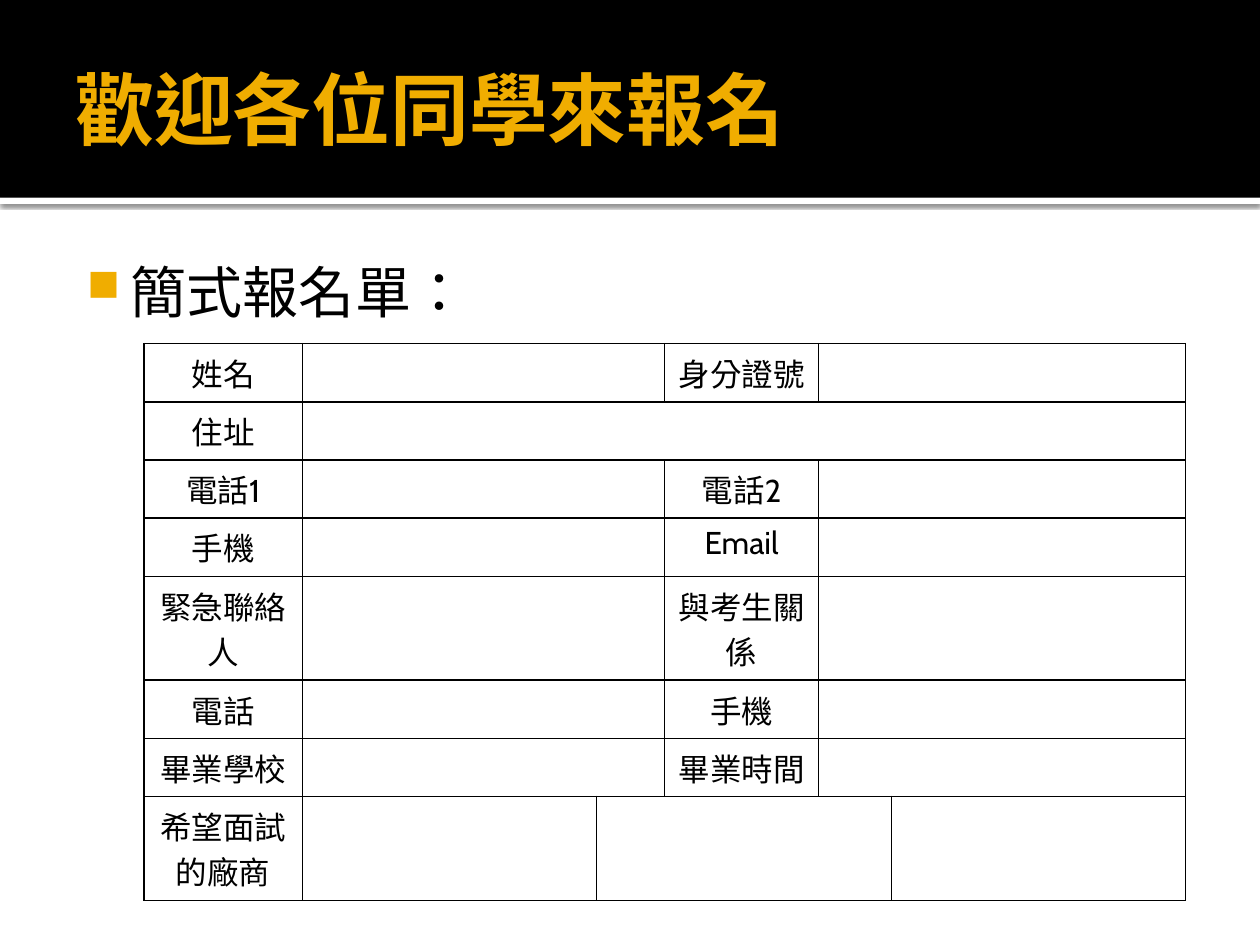
import pptx
import pptx.util
import pptx.dml.color
import pptx.enum.lang
import pptx.enum.text
import pptx.enum.shapes
import pptx.oxml
import pptx.oxml.ns

Pt = pptx.util.Pt
ALIGN = pptx.enum.text.PP_ALIGN
ANCHOR = pptx.enum.text.MSO_ANCHOR
RECT = pptx.enum.shapes.MSO_SHAPE.RECTANGLE
LANG = pptx.enum.lang.MSO_LANGUAGE_ID.TRADITIONAL_CHINESE
NS = pptx.oxml.ns.nsdecls("a")
GOLD, BLACK, WHITE = "F0AD00", "000000", "FFFFFF"


def color(code):
    return pptx.dml.color.RGBColor.from_string(code)


def write(frame, text, size, code, bold=False):
    frame.text = text
    font = frame.paragraphs[0].runs[0].font
    font.name, font.size, font.bold = "Cabin", Pt(size), bold
    font.language_id = LANG
    font.color.rgb = color(code)


deck = pptx.Presentation()
deck.slide_width, deck.slide_height = Pt(720), Pt(540)
slide = deck.slides.add_slide(deck.slide_layouts[6])
shapes = slide.shapes

# Header band with a shadowed white strip below it
for top, height, code in [(113, 3.6, WHITE), (0, 113, BLACK)]:
    band = shapes.add_shape(RECT, 0, Pt(top), Pt(720), Pt(height))
    band.shadow.inherit = False
    band.fill.solid()
    band.fill.fore_color.rgb = color(code)
    band.line.fill.background()
    if code == WHITE:
        effect = band._element.spPr.find(pptx.oxml.ns.qn("a:effectLst"))
        effect.append(pptx.oxml.parse_xml(
            f'<a:outerShdw {NS} blurRad="{Pt(2.5)}" dist="{Pt(0.8)}" dir="5400000" '
            f'rotWithShape="0"><a:srgbClr val="{BLACK}"><a:alpha val="60000"/>'
            '</a:srgbClr></a:outerShdw>'))

# Title
title = shapes.add_textbox(Pt(36), Pt(12.24), Pt(648), Pt(98.64)).text_frame
title.word_wrap = True
title.vertical_anchor = ANCHOR.MIDDLE
title.margin_right = Pt(3.6)
write(title, "歡迎各位同學來報名", 45, GOLD, True)

# Bullet
body = shapes.add_textbox(Pt(36), Pt(139.68), Pt(648), Pt(364.32)).text_frame
body.word_wrap = True
body.margin_left, body.margin_top = Pt(4.32), Pt(7.2)
write(body, "簡式報名單：", 32, BLACK)
props = body.paragraphs[0]._p.get_or_add_pPr()
props.set("marL", str(Pt(34.56)))
props.set("indent", str(Pt(-25.2)))
for mark in [f'<a:buClr {NS}><a:srgbClr val="{GOLD}"/></a:buClr>',
             f'<a:buSzPct {NS} val="80000"/>',
             f'<a:buFont {NS} typeface="OpenSymbol"/>',
             f'<a:buChar {NS} char="■"/>']:
    props.append(pptx.oxml.parse_xml(mark))

# Sign-up form: a label in column 0 and, where there are two, in column 3
labels = [("姓名", "身分證號"), ("住址",), ("電話1", "電話2"), ("手機", "Email"),
          ("緊急聯絡人", "與考生關係"), ("電話", "手機"),
          ("畢業學校", "畢業時間"), ("希望面試的廠商",)]
widths = [90.6, 168.2, 38.8, 88, 41.6, 168.2]
heights = [59.4 if len(names[0]) > 4 else 33.25 for names in labels]
last = len(labels) - 1
table = shapes.add_table(len(labels), len(widths), Pt(82.2), Pt(196.4),
                         Pt(sum(widths)), Pt(sum(heights))).table
table.first_row = table.horz_banding = False
for col, width in zip(table.columns, widths):
    col.width = Pt(width)
for row, height in zip(table.rows, heights):
    row.height = Pt(height)

for cell in table.iter_cells():
    cell.fill.background()
    for spot, side in enumerate("LRTB"):
        cell._tc.get_or_add_tcPr().insert(spot, pptx.oxml.parse_xml(
            f'<a:ln{side} {NS} w="{Pt(1)}"><a:solidFill><a:srgbClr val="{BLACK}"/>'
            f'</a:solidFill></a:ln{side}>'))

for num, names in enumerate(labels):
    if num == last:
        spans = [(2, 4)]
    elif len(names) == 1:
        spans = [(1, 5)]
    else:
        spans = [(1, 2), (4, 5)]
    for start, end in spans:
        table.cell(num, start).merge(table.cell(num, end))
    for col, name in zip((0, 3), names):
        frame = table.cell(num, col).text_frame
        write(frame, name, 18, BLACK)
        frame.paragraphs[0].alignment = ALIGN.CENTER

deck.save("out.pptx")
